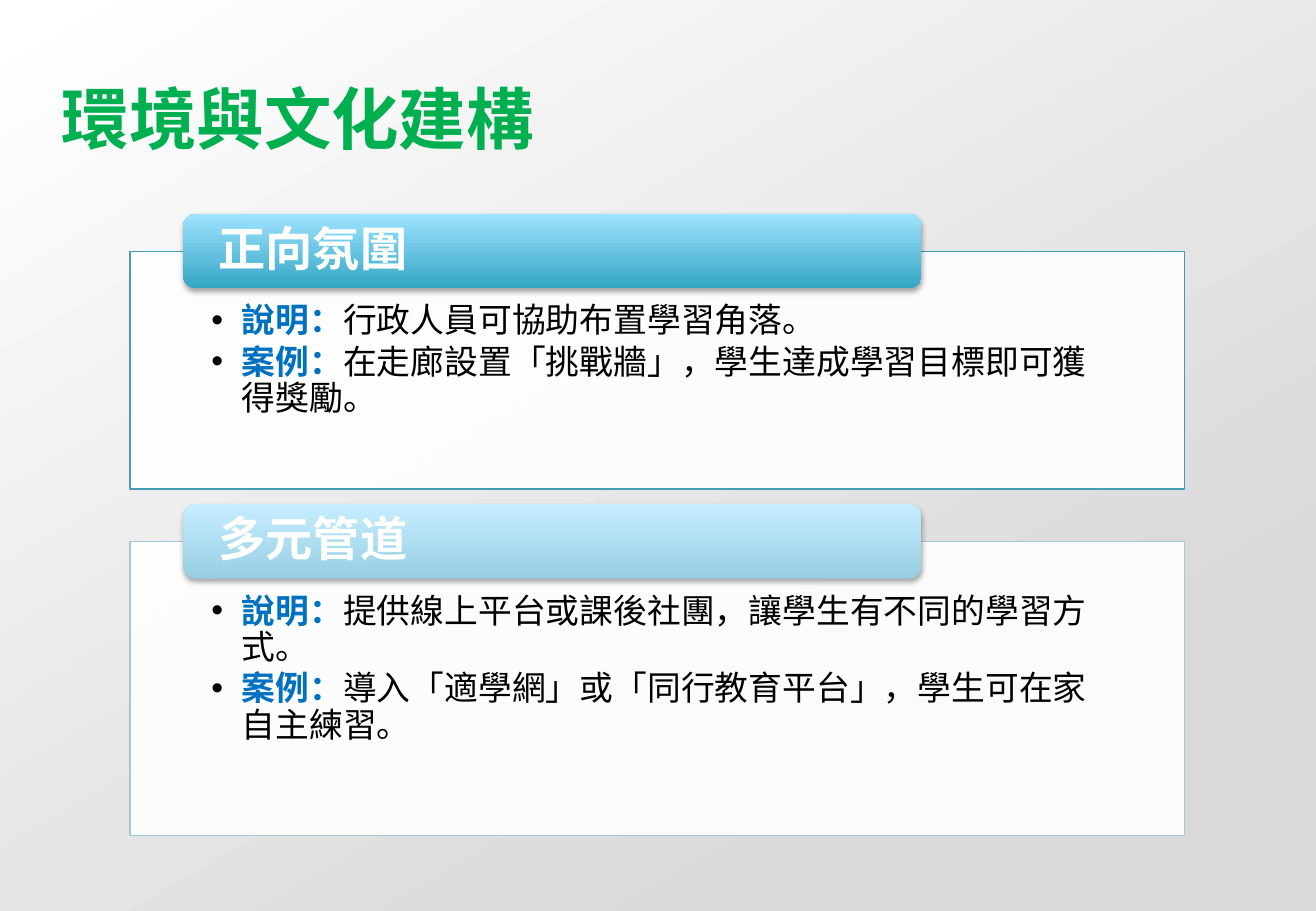
from lxml import etree
from pptx import Presentation
from pptx.dml.color import RGBColor
from pptx.enum.shapes import MSO_SHAPE
from pptx.enum.text import MSO_ANCHOR, PP_ALIGN
from pptx.oxml.ns import qn
from pptx.util import Pt

RECT, ROUND = MSO_SHAPE.RECTANGLE, MSO_SHAPE.ROUNDED_RECTANGLE
TOP, MIDDLE = MSO_ANCHOR.TOP, MSO_ANCHOR.MIDDLE
LEFT = PP_ALIGN.LEFT
FACE = "Noto Sans CJK SC"

LABEL, INK, WHITE = "0070C0", "000000", "FFFFFF"
CARD_X, CARD_Y, CARD_W, GAP = 77, 149, 625, 31
CARDS = [
    ("正向氛圍", 141, "449CB4", ("33A6C4", "9FE3FF"), [
        ("說明：", "行政人員可協助布置學習角落。"),
        ("案例：", "在走廊設置「挑戰牆」，學生達成學習目標即可獲得獎勵。"),
    ]),
    ("多元管道", 174.2, "A1CAD9", ("98CEE2", "C5EEFF"), [
        ("說明：", "提供線上平台或課後社團，讓學生有不同的學習方式。"),
        ("案例：", "導入「適學網」或「同行教育平台」，學生可在家自主練習。"),
    ]),
]


def rgb(code):
    return RGBColor.from_string(code)


def add(parent, name, **attrs):
    """Append a drawing element and return it."""
    return etree.SubElement(parent, qn(name), attrs)


def blend(fill, colors, angle, end=1):
    """Fill with a two-colour gradient that is complete at end."""
    fill.gradient()
    fill.gradient_angle = angle
    for stop, color, place in zip(fill.gradient_stops, colors, (0, end)):
        stop.color.rgb = rgb(color)
        stop.position = place


def style(para, size):
    para.alignment = LEFT
    para.font.size = Pt(size)
    para.font.name = FACE
    props = para._p.pPr.find(qn("a:defRPr"))
    add(props, "a:ea", typeface=FACE)


def write(para, text, color, bold):
    run = para.add_run()
    run.text = text
    run.font.bold = bold
    run.font.color.rgb = rgb(color)


def frame(shape, anchor, left=0, top=0, right=0, bottom=0):
    """Set insets and anchor, and return the text frame."""
    text = shape.text_frame
    text.word_wrap = True
    text.vertical_anchor = anchor
    text.margin_left, text.margin_top = Pt(left), Pt(top)
    text.margin_right, text.margin_bottom = Pt(right), Pt(bottom)
    return text


def add_title(slide, text, x, y, w, h):
    box = slide.shapes.add_textbox(Pt(x), Pt(y), Pt(w), Pt(h))
    para = frame(box, TOP).paragraphs[0]
    style(para, 40)
    write(para, text, "00B050", True)


def add_panel(slide, points, edge, x, y, w, h):
    panel = slide.shapes.add_shape(RECT, Pt(x), Pt(y), Pt(w), Pt(h))
    panel.shadow.inherit = False
    panel.fill.solid()
    panel.fill.fore_color.rgb = rgb(WHITE)
    shade = panel._element.spPr.find(".//" + qn("a:srgbClr"))
    add(shade, "a:alpha", val="90000")
    panel.line.color.rgb = rgb(edge)
    panel.line.width = Pt(0.75)
    text = frame(panel, TOP, 48.24, 31, 48.24, 11.5)
    for i, (label, detail) in enumerate(points):
        para = text.add_paragraph() if i else text.paragraphs[0]
        para.line_spacing = 0.9
        para.space_after = Pt(3)
        props = para._p.get_or_add_pPr()
        props.set("marL", str(Pt(18)))
        props.set("indent", str(-Pt(18)))
        add(add(props, "a:buClr"), "a:srgbClr", val=INK)
        add(props, "a:buFont", typeface="Arial")
        add(props, "a:buChar", char="•")
        style(para, 20)
        write(para, label, LABEL, True)
        write(para, detail, INK, False)


def add_tab(slide, name, colors, x, y, w, h):
    tab = slide.shapes.add_shape(ROUND, Pt(x), Pt(y), Pt(w), Pt(h))
    blend(tab.fill, colors, 90)
    tab.line.fill.background()
    tab.shadow.inherit = False
    effects = tab._element.spPr.find(qn("a:effectLst"))
    shadow = add(effects, "a:outerShdw", blurRad=str(Pt(3.1)),
                 dist=str(Pt(1.8)), dir="5400000", rotWithShape="0")
    add(add(shadow, "a:srgbClr", val=INK), "a:alpha", val="35000")
    para = frame(tab, MIDDLE, 18.7, 0, 18.7).paragraphs[0]
    para.line_spacing = 0.9
    style(para, 28)
    write(para, name, WHITE, True)


def add_card(slide, card, x, y, w):
    """Place a panel with its tab over the top edge; return its height."""
    name, h, edge, colors, points = card
    add_panel(slide, points, edge, x, y, w, h)
    add_tab(slide, name, colors, x + 31.7, y - 22, w * 0.7, 44)
    return h


def main():
    deck = Presentation()
    deck.slide_width, deck.slide_height = Pt(780), Pt(540)
    slide = deck.slides.add_slide(deck.slide_layouts[6])
    blend(slide.background.fill, (WHITE, "D9D9D9"), 300, 0.8)
    add_title(slide, "環境與文化建構", 36.7, 45.4, 742, 48)
    y = CARD_Y
    for card in CARDS:
        y += add_card(slide, card, CARD_X, y, CARD_W) + GAP
    deck.save("out.pptx")


if __name__ == "__main__":
    main()
